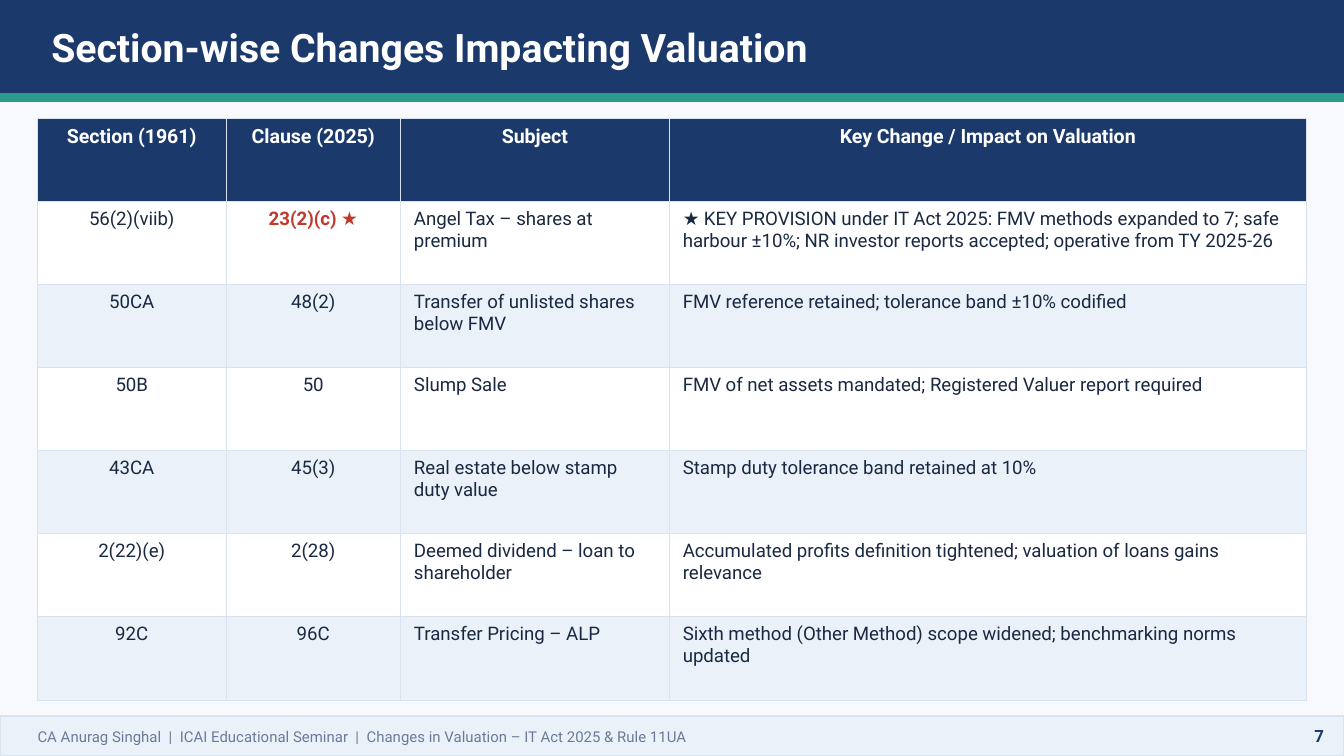
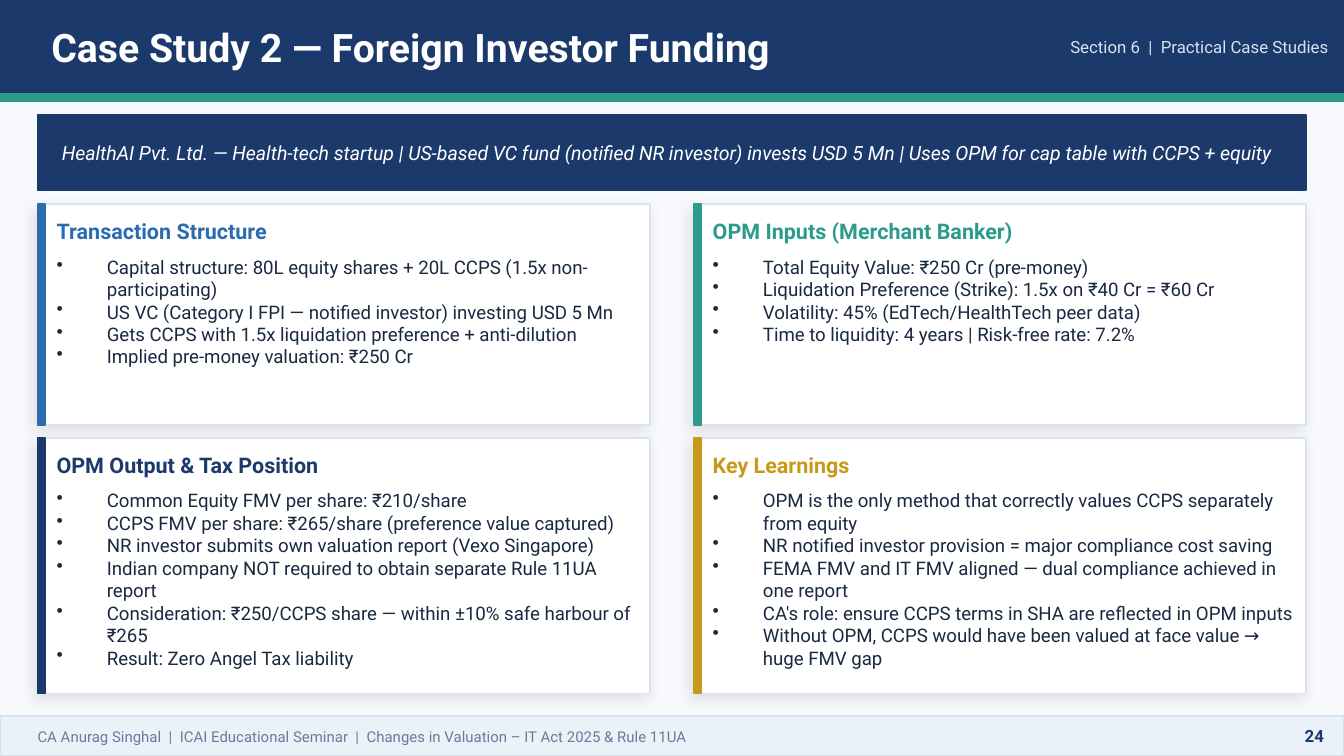
from lxml.etree import SubElement
from pptx import Presentation
from pptx.dml.color import RGBColor
from pptx.enum.shapes import MSO_SHAPE
from pptx.enum.text import MSO_ANCHOR, PP_ALIGN
from pptx.oxml.ns import qn
from pptx.util import Cm, Pt

NAVY = RGBColor(0x1B, 0x3A, 0x6B)
TEAL = RGBColor(0x2C, 0x9B, 0x8B)
BLUE = RGBColor(0x2B, 0x6C, 0xB0)
GOLD = RGBColor(0xC9, 0x99, 0x1A)
RED = RGBColor(0xC0, 0x39, 0x2B)
INK = RGBColor(0x1A, 0x29, 0x42)
GREY = RGBColor(0x6B, 0x7A, 0x99)
RULE = RGBColor(0xD9, 0xE3, 0xEF)
PALE = RGBColor(0xEB, 0xF1, 0xF9)
PAGE = RGBColor(0xF7, 0xF9, 0xFC)
WHITE = RGBColor(0xFF, 0xFF, 0xFF)

FONT = "Roboto"
WIDTH, HEIGHT = 25.4, 14.29
MARGIN = 0.71
CONTENT_W = WIDTH - 2 * MARGIN
FOOTER = "CA Anurag Singhal  |  ICAI Educational Seminar  |  Changes in Valuation – IT Act 2025 & Rule 11UA"

# Text formats: font attributes, with the colour under "color"
TITLE = {"size": Pt(21), "bold": True, "color": WHITE}
TAG = {"size": Pt(9), "color": RULE}
FOOT = {"size": Pt(8), "color": GREY}
PAGE_NO = {"size": Pt(9), "bold": True, "color": NAVY}
SCENARIO = {"size": Pt(10.5), "italic": True, "color": WHITE}
CARD_TITLE = {"size": Pt(11.5), "bold": True}
BODY = {"size": Pt(10), "color": INK}
HEAD_CELL = {"size": Pt(10.5), "bold": True, "color": WHITE}
KEY_CELL = {"size": Pt(10), "bold": True, "color": RED}

COLUMNS = [3.56, 3.3, 5.08, 12.04]
ROW_H = 1.57
CHANGES = [
    ("Section (1961)", "Clause (2025)", "Subject", "Key Change / Impact on Valuation"),
    ("56(2)(viib)", "23(2)(c) ★", "Angel Tax – shares at premium",
     "★ KEY PROVISION under IT Act 2025: FMV methods expanded to 7; safe harbour ±10%; "
     "NR investor reports accepted; operative from TY 2025-26"),
    ("50CA", "48(2)", "Transfer of unlisted shares below FMV",
     "FMV reference retained; tolerance band ±10% codified"),
    ("50B", "50", "Slump Sale", "FMV of net assets mandated; Registered Valuer report required"),
    ("43CA", "45(3)", "Real estate below stamp duty value",
     "Stamp duty tolerance band retained at 10%"),
    ("2(22)(e)", "2(28)", "Deemed dividend – loan to shareholder",
     "Accumulated profits definition tightened; valuation of loans gains relevance"),
    ("92C", "96C", "Transfer Pricing – ALP",
     "Sixth method (Other Method) scope widened; benchmarking norms updated"),
]

CASE = ("HealthAI Pvt. Ltd. — Health-tech startup | US-based VC fund (notified NR investor) "
        "invests USD 5 Mn | Uses OPM for cap table with CCPS + equity")
CARD_W, CARD_GAP_X, CARD_GAP_Y = 11.58, 0.82, 0.25
CARD_TOP, CARD_HEIGHTS = 3.86, [4.17, 4.83]
CARDS = [
    ("Transaction Structure", BLUE, [
        "Capital structure: 80L equity shares + 20L CCPS (1.5x non-participating)",
        "US VC (Category I FPI — notified investor) investing USD 5 Mn",
        "Gets CCPS with 1.5x liquidation preference + anti-dilution",
        "Implied pre-money valuation: ₹250 Cr"]),
    ("OPM Inputs (Merchant Banker)", TEAL, [
        "Total Equity Value: ₹250 Cr (pre-money)",
        "Liquidation Preference (Strike): 1.5x on ₹40 Cr = ₹60 Cr",
        "Volatility: 45% (EdTech/HealthTech peer data)",
        "Time to liquidity: 4 years | Risk-free rate: 7.2%"]),
    ("OPM Output & Tax Position", NAVY, [
        "Common Equity FMV per share: ₹210/share",
        "CCPS FMV per share: ₹265/share (preference value captured)",
        "NR investor submits own valuation report (Vexo Singapore)",
        "Indian company NOT required to obtain separate Rule 11UA report",
        "Consideration: ₹250/CCPS share — within ±10% safe harbour of ₹265",
        "Result: Zero Angel Tax liability"]),
    ("Key Learnings", GOLD, [
        "OPM is the only method that correctly values CCPS separately from equity",
        "NR notified investor provision = major compliance cost saving",
        "FEMA FMV and IT FMV aligned — dual compliance achieved in one report",
        "CA's role: ensure CCPS terms in SHA are reflected in OPM inputs",
        "Without OPM, CCPS would have been valued at face value → huge FMV gap"]),
]


def cm(box):
    return [Cm(v) for v in box]


def write(p, text, fmt, align=PP_ALIGN.LEFT):
    p.alignment = align
    r = p.add_run()
    r.text = text
    r.font.name = FONT
    for name, value in fmt.items():
        if name == "color":
            r.font.color.rgb = value
        else:
            setattr(r.font, name, value)


def add_rect(s, box, fill, line=None):
    sp = s.shapes.add_shape(MSO_SHAPE.RECTANGLE, *cm(box))
    sp.shadow.inherit = False
    sp.fill.solid()
    sp.fill.fore_color.rgb = fill
    sp.line.color.rgb = line or fill
    sp.line.width = Pt(1)
    return sp


def add_frame(s, box, anchor=MSO_ANCHOR.MIDDLE):
    tf = s.shapes.add_textbox(*cm(box)).text_frame
    settings = {"word_wrap": True, "vertical_anchor": anchor, "margin_left": 0,
                "margin_right": 0, "margin_top": 0, "margin_bottom": 0}
    for name, value in settings.items():
        setattr(tf, name, value)
    return tf


def add_text(s, box, text, fmt, align=PP_ALIGN.LEFT):
    write(add_frame(s, box).paragraphs[0], text, fmt, align)


def add_bullets(s, box, items):
    tf = add_frame(s, box, MSO_ANCHOR.TOP)
    for i, item in enumerate(items):
        p = tf.add_paragraph() if i else tf.paragraphs[0]
        pPr = p._p.get_or_add_pPr()
        pPr.set("marL", str(Cm(0.95)))
        pPr.set("indent", str(-Cm(0.95)))
        SubElement(pPr, qn("a:buChar"), char="•")
        write(p, item, BODY)


def add_soft_shadow(sp):
    effects = sp._element.spPr.find(qn("a:effectLst"))
    shadow = SubElement(effects, qn("a:outerShdw"), blurRad=str(Pt(8)), dist=str(Pt(3)),
                        dir="8100000", algn="bl", rotWithShape="0")
    color = SubElement(shadow, qn("a:srgbClr"), val="000000")
    SubElement(color, qn("a:alpha"), val="10000")


def add_borders(cell):
    tcPr = cell._tc.get_or_add_tcPr()
    for side in ("a:lnL", "a:lnR", "a:lnT", "a:lnB"):
        ln = SubElement(tcPr, qn(side), w=str(Pt(0.5)))
        SubElement(SubElement(ln, qn("a:solidFill")), qn("a:srgbClr"), val=str(RULE))


def add_header(s, box, title, tag):
    x, y, w, h = box
    add_rect(s, box, NAVY)
    add_rect(s, (x, y + h, w, 0.13), TEAL)
    add_text(s, (x + 0.97, y, 18.29, h), title, TITLE)
    if tag:
        add_text(s, (x + w - 7.11, y, 6.81, h), tag, TAG, PP_ALIGN.RIGHT)


def add_footer(s, box, number):
    x, y, w, h = box
    add_rect(s, box, PALE, RULE)
    add_text(s, (x + MARGIN, y, 22.35, h), FOOTER, FOOT)
    add_text(s, (x + w - 1.78, y, 1.4, h), str(number), PAGE_NO, PP_ALIGN.RIGHT)


def add_page(prs, title, number, tag=None):
    s = prs.slides.add_slide(prs.slide_layouts[6])
    s.background.fill.solid()
    s.background.fill.fore_color.rgb = PAGE
    add_header(s, (0, 0, WIDTH, 1.78), title, tag)
    add_footer(s, (0, 13.54, WIDTH, HEIGHT - 13.54), number)
    return s


def add_changes_table(s, x, y):
    box = (x, y, sum(COLUMNS), ROW_H * len(CHANGES))
    table = s.shapes.add_table(len(CHANGES), len(COLUMNS), *cm(box)).table
    table.first_row = table.horz_banding = False
    for col, width in zip(table.columns, COLUMNS):
        col.width = Cm(width)
    for i, texts in enumerate(CHANGES):
        table.rows[i].height = Cm(ROW_H)
        fill = NAVY if i == 0 else WHITE if i % 2 else PALE
        for j, text in enumerate(texts):
            cell = table.cell(i, j)
            add_borders(cell)
            cell.fill.solid()
            cell.fill.fore_color.rgb = fill
            fmt = HEAD_CELL if i == 0 else KEY_CELL if (i, j) == (1, 1) else BODY
            align = PP_ALIGN.CENTER if i == 0 or j < 2 else PP_ALIGN.LEFT
            write(cell.text_frame.paragraphs[0], text, fmt, align)


def add_scenario(s, box):
    x, y, w, h = box
    add_rect(s, box, NAVY)
    add_text(s, (x + 0.46, y, w - 0.97, h), CASE, SCENARIO)


def add_card(s, box, title, accent, items):
    x, y, w, h = box
    add_soft_shadow(add_rect(s, box, WHITE, RULE))
    add_rect(s, (x, y, 0.15, h), accent)
    add_text(s, (x + 0.36, y + 0.15, w - 0.56, 0.71), title, {**CARD_TITLE, "color": accent})
    add_bullets(s, (x + 0.36, y + 0.97, w - 0.56, h - 1.17), items)


def build_changes_slide(prs):
    s = add_page(prs, "Section-wise Changes Impacting Valuation", 7)
    add_changes_table(s, MARGIN, 2.24)


def build_case_slide(prs):
    s = add_page(prs, "Case Study 2 — Foreign Investor Funding", 24,
                 "Section 6  |  Practical Case Studies")
    add_scenario(s, (MARGIN, 2.18, CONTENT_W, 1.42))
    # Two by two grid of cards
    for i, card in enumerate(CARDS):
        row, col = divmod(i, 2)
        x = MARGIN + col * (CARD_W + CARD_GAP_X)
        y = CARD_TOP + sum(CARD_HEIGHTS[:row]) + row * CARD_GAP_Y
        add_card(s, (x, y, CARD_W, CARD_HEIGHTS[row]), *card)


def main():
    prs = Presentation()
    prs.slide_width, prs.slide_height = Cm(WIDTH), Cm(HEIGHT)
    build_changes_slide(prs)
    build_case_slide(prs)
    prs.save("out.pptx")


if __name__ == "__main__":
    main()
